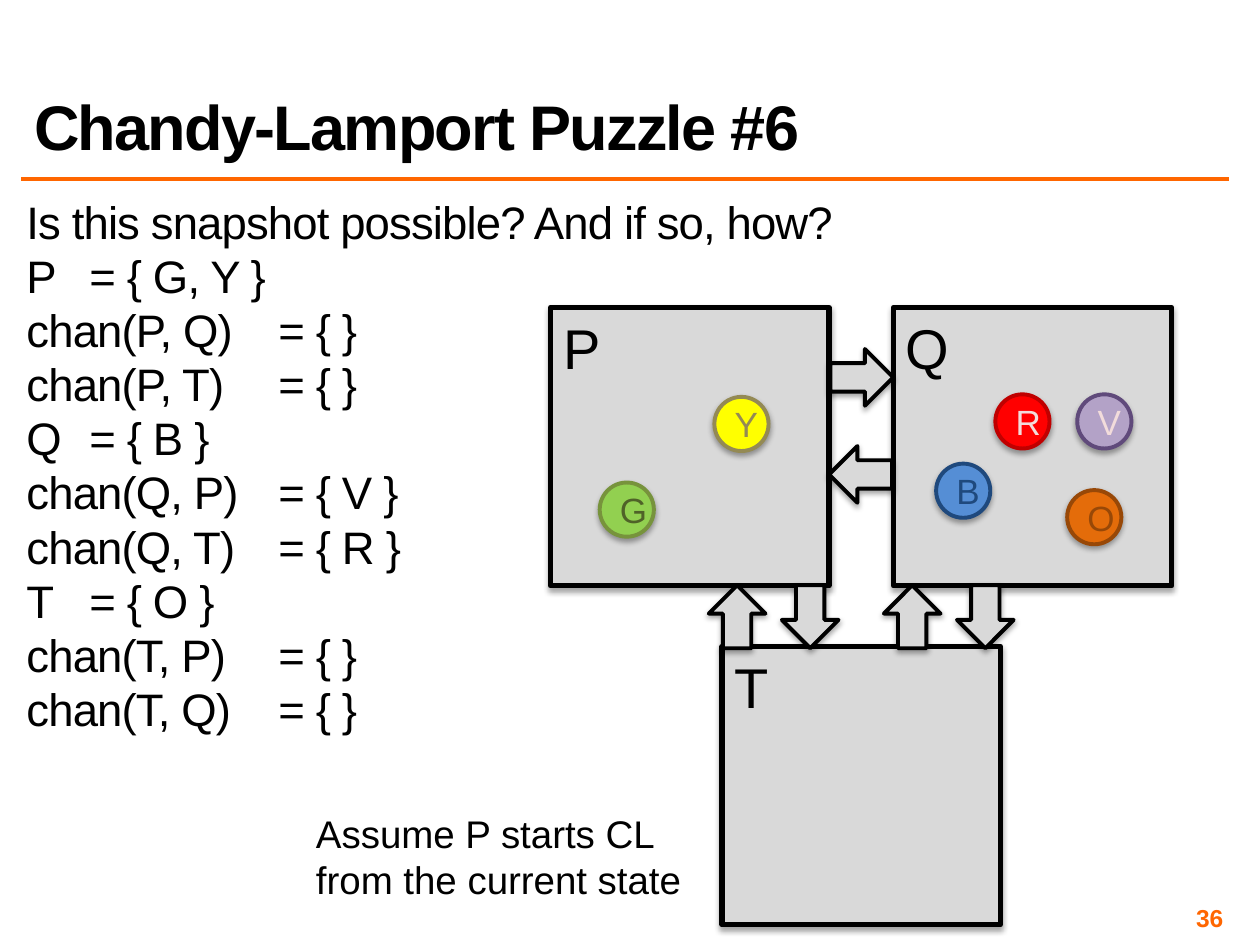
from lxml import etree
from pptx import Presentation
from pptx.dml.color import RGBColor
from pptx.enum import shapes, text
from pptx.oxml.ns import qn
from pptx.util import Inches, Pt

BLACK = RGBColor(0x00, 0x00, 0x00)
ORANGE = RGBColor(0xFF, 0x66, 0x00)
GREY = RGBColor(0xD9, 0xD9, 0xD9)
RED, DARK_RED = RGBColor(0xFF, 0x00, 0x00), RGBColor(0xC0, 0x00, 0x00)
GREEN, OLIVE = RGBColor(0x92, 0xD0, 0x50), RGBColor(0x77, 0x93, 0x3C)
DARK_GREEN = RGBColor(0x4F, 0x62, 0x28)
BLUE, NAVY = RGBColor(0x55, 0x8E, 0xD5), RGBColor(0x1F, 0x49, 0x7D)
YELLOW, KHAKI = RGBColor(0xFF, 0xFF, 0x00), RGBColor(0x94, 0x8A, 0x54)
AMBER, BROWN = RGBColor(0xE4, 0x6C, 0x0A), RGBColor(0x98, 0x48, 0x07)
LILAC, PURPLE = RGBColor(0xB3, 0xA2, 0xC7), RGBColor(0x60, 0x4A, 0x7B)
PINK = RGBColor(0xF2, 0xDC, 0xDB)

SHAPE = shapes.MSO_SHAPE
ALIGN = text.PP_ALIGN
ANCHOR = text.MSO_ANCHOR
SIDE = 2.21    # process square
TOKEN = 0.43   # token diameter
ARROW_W, ARROW_H = 0.5, 0.45

QUESTION = "Is this snapshot possible? And if so, how?"
SNAPSHOT = [
    ("P", "{ G, Y }"), ("chan(P, Q)", "{ }"), ("chan(P, T)", "{ }"),
    ("Q", "{ B }"), ("chan(Q, P)", "{ V }"), ("chan(Q, T)", "{ R }"),
    ("T", "{ O }"), ("chan(T, P)", "{ }"), ("chan(T, Q)", "{ }"),
]
PROCESSES = [("P", 4.37, 2.44), ("Q", 7.09, 2.44), ("T", 5.73, 5.13)]
TOKENS = [  # letter, left, top, fill, line, text
    ("R", 7.9, 3.13, RED, DARK_RED, PINK),
    ("G", 4.76, 3.83, GREEN, OLIVE, DARK_GREEN),
    ("B", 7.43, 3.68, BLUE, NAVY, NAVY),
    ("Y", 5.67, 3.15, YELLOW, KHAKI, KHAKI),
    ("O", 8.47, 3.89, AMBER, BROWN, BROWN),
    ("V", 8.55, 3.13, LILAC, PURPLE, PINK),
]
CHANNELS = [  # left, top, rotation
    (5.6, 4.67, 270), (6.18, 4.67, 90),
    (6.59, 2.77, 0), (6.58, 3.54, 180),
    (6.99, 4.67, 270), (7.57, 4.67, 90),
]


def apply(obj, **values):
    for name, value in values.items():
        setattr(obj, name, value)


def place(sp, box):
    names = ("left", "top", "width", "height")
    apply(sp, **dict(zip(names, map(Inches, box))))


def frame(tf, inset=None, **values):
    apply(tf, word_wrap=True, auto_size=text.MSO_AUTO_SIZE.NONE, **values)
    if inset is not None:
        sides = ("left", "top", "right", "bottom")
        apply(tf, **{f"margin_{side}": Inches(inset) for side in sides})


def write(p, words, size, color=BLACK, bold=False, align=ALIGN.LEFT, spacing=0):
    p.alignment = align
    r = p.add_run()
    r.text = words
    apply(r.font, name="Arial", size=Pt(size), bold=bold)
    r.font.color.rgb = color
    if spacing:
        r._r.get_or_add_rPr().set("spc", str(int(spacing * 100)))


def add_heading(s, box):
    sp = s.shapes.title
    place(sp, box)
    frame(sp.text_frame, vertical_anchor=ANCHOR.BOTTOM)
    p = sp.text_frame.paragraphs[0]
    p.line_spacing = 0.8
    write(p, "Chandy-Lamport Puzzle #6", 36, bold=True, spacing=-1)

    # Rule under the title
    left, top, width, height = box
    y = Inches(top + height + 0.08)
    rule = s.shapes.add_connector(shapes.MSO_CONNECTOR.STRAIGHT,
                                  Inches(left), y, Inches(left + width), y)
    rule.line.color.rgb = ORANGE
    rule.line.width = Pt(2)
    etree.SubElement(rule._element.spPr, qn("a:effectLst"))


def add_snapshot(s, box):
    sp = s.placeholders[1]
    place(sp, box)
    tf = sp.text_frame
    frame(tf, inset=0.04, vertical_anchor=ANCHOR.TOP)
    lines = [QUESTION] + [f"{name}\t= {state}" for name, state in SNAPSHOT]
    for i, line in enumerate(lines):
        p = tf.add_paragraph() if i else tf.paragraphs[0]
        apply(p, line_spacing=0.8, space_before=Pt(6))
        write(p, line, 26, spacing=-0.5)
        # No bullet, and one tab stop that lines up the states
        pPr = p._p.get_or_add_pPr()
        pPr.set("marL", "0")
        pPr.set("indent", "0")
        etree.SubElement(pPr, qn("a:buNone"))
        tabs = etree.SubElement(pPr, qn("a:tabLst"))
        etree.SubElement(tabs, qn("a:tab"), pos=str(Inches(2)), algn="l")


def add_text(s, box, words, size, inset=None, anchor=ANCHOR.TOP, **style):
    tf = s.shapes.add_textbox(*map(Inches, box)).text_frame
    frame(tf, inset=inset, vertical_anchor=anchor)
    write(tf.paragraphs[0], words, size, **style)


def add_solid(s, kind, box, fill, line, weight):
    # The theme's soft shadow is kept
    sp = s.shapes.add_shape(kind, *map(Inches, box))
    sp.fill.solid()
    sp.fill.fore_color.rgb = fill
    sp.line.color.rgb = line
    sp.line.width = Pt(weight)
    return sp


def add_process(s, box, name):
    tf = add_solid(s, SHAPE.RECTANGLE, box, GREY, BLACK, 3).text_frame
    frame(tf, vertical_anchor=ANCHOR.TOP)
    write(tf.paragraphs[0], name, 32)


def add_token(s, box, letter, fill, line, color):
    tf = add_solid(s, SHAPE.OVAL, box, fill, line, 2.25).text_frame
    frame(tf, vertical_anchor=ANCHOR.MIDDLE)
    write(tf.paragraphs[0], letter, 20, color, align=ALIGN.CENTER)


def add_diagram(s):
    # Processes, with T drawn over the tokens' layer like the others
    for name, left, top in PROCESSES:
        add_process(s, (left, top, SIDE, SIDE), name)
    for letter, left, top, *colors in TOKENS:
        add_token(s, (left, top, TOKEN, TOKEN), letter, *colors)
    # Channels
    for left, top, rotation in CHANNELS:
        box = (left, top, ARROW_W, ARROW_H)
        arrow = add_solid(s, SHAPE.RIGHT_ARROW, box, GREY, BLACK, 2.25)
        arrow.rotation = rotation


def main():
    prs = Presentation()
    apply(prs, slide_width=Inches(10), slide_height=Inches(7.5))
    s = prs.slides.add_slide(prs.slide_layouts[1])
    add_heading(s, (0.17, 0.17, 9.58, 1.17))
    add_snapshot(s, (0.17, 1.58, 9.58, 5.11))
    add_text(s, (7.42, 7.17, 2.33, 0.23), "36", 14, inset=0.04,
             anchor=ANCHOR.MIDDLE, color=ORANGE, bold=True, align=ALIGN.RIGHT)
    add_diagram(s)
    add_text(s, (2.41, 6.38, 3.33, 0.84),
             "Assume P starts CL from the current state", 22)
    prs.save("out.pptx")


if __name__ == "__main__":
    main()
